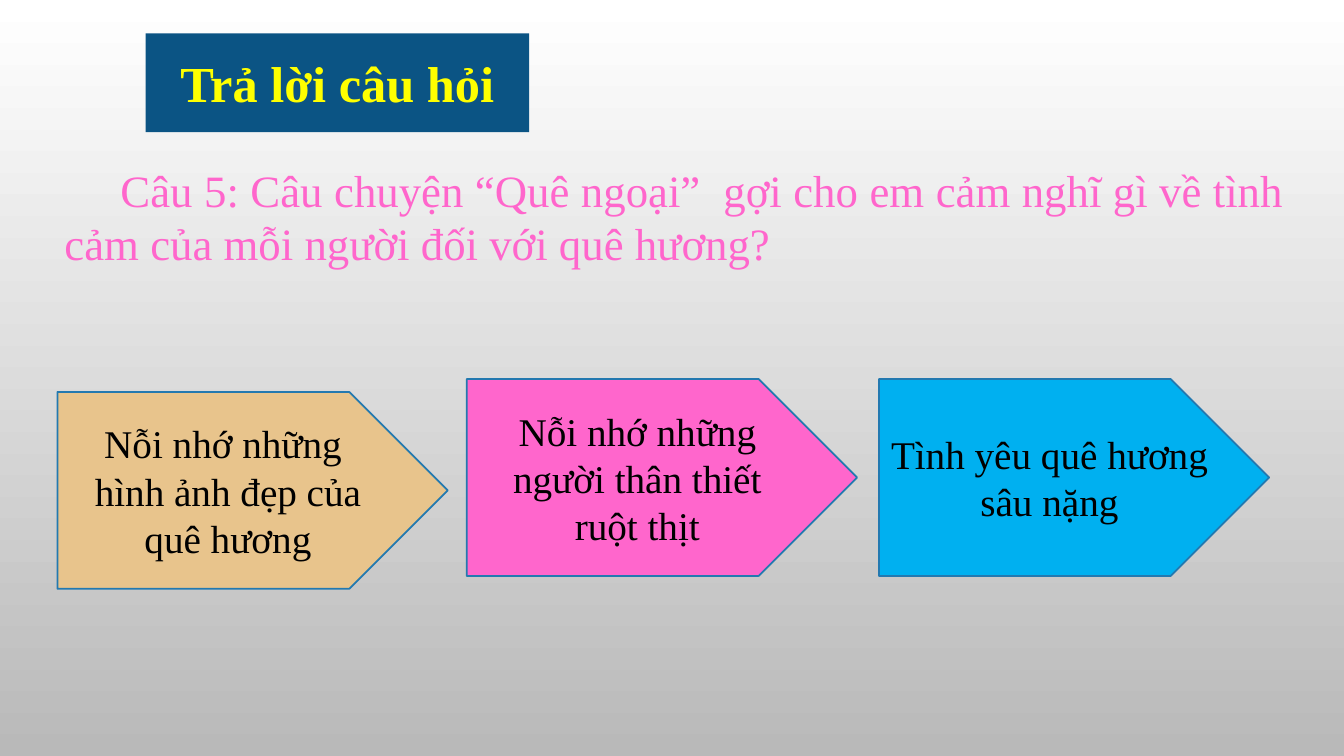
import lxml.etree
import pptx
import pptx.dml.color
import pptx.enum.shapes
import pptx.enum.text
import pptx.oxml.ns
import pptx.util

Pt = pptx.util.Pt
ALIGN = pptx.enum.text.PP_ALIGN
ANCHOR = pptx.enum.text.MSO_ANCHOR
AUTO_SIZE = pptx.enum.text.MSO_AUTO_SIZE
FONT_NAME = "Times New Roman"
ARROWS = [
    (41, 280, "E8C48C", ["Nỗi nhớ những ", "hình ảnh đẹp của quê hương"]),
    (333.4, 270.8, "FF66CC", ["Nỗi nhớ những người thân thiết ruột thịt"]),
    (627.8, 270.8, "00B0F0", ["Tình yêu quê hương sâu nặng"]),
]


def color(hex_value):
    """Return the colour for a hex string."""
    return pptx.dml.color.RGBColor.from_string(hex_value)


def apply_format(target, values):
    """Set each attribute of the target from a dict of values."""
    for name, value in values.items():
        setattr(target, name, value)


def place(shape, box):
    """Move and size a shape to a box in points."""
    apply_format(shape, dict(zip(("left", "top", "width", "height"), map(Pt, box))))


def write_text(shape, lines, alignment, anchor, font_values, font_color):
    """Fill a shape with formatted paragraphs."""
    frame = shape.text_frame
    apply_format(frame, {"text": "\n".join(lines), "word_wrap": True,
                         "auto_size": AUTO_SIZE.NONE, "vertical_anchor": anchor})
    for paragraph in frame.paragraphs:
        paragraph.alignment = alignment
        apply_format(paragraph.font, {"name": FONT_NAME, **font_values})
        paragraph.font.color.rgb = color(font_color)


def paint_background(slide):
    """Fill the slide with a white to grey gradient running down."""
    fill = slide.background.fill
    fill.gradient()
    fill.gradient_angle = 270
    for stop, position, hex_value in zip(fill.gradient_stops, (0, 1), ("FFFFFF", "B9B9B9")):
        stop.position = position
        stop.color.rgb = color(hex_value)


def build_title(slide, box):
    """Turn the title placeholder into a rounded blue banner."""
    title = slide.shapes.title
    place(title, box)
    properties = title.element.spPr
    geometry = lxml.etree.SubElement(properties, pptx.oxml.ns.qn("a:prstGeom"), prst="roundRect")
    lxml.etree.SubElement(geometry, pptx.oxml.ns.qn("a:avLst"))
    title.fill.solid()
    title.fill.fore_color.rgb = color("0B5484")
    write_text(title, ["Trả lời câu hỏi"], ALIGN.CENTER, ANCHOR.MIDDLE,
               {"size": Pt(36), "bold": True}, "FFFF00")


def build_question(slide, box):
    """Add the question with an indented first line."""
    question = slide.shapes.add_textbox(*map(Pt, box))
    text = ("Câu 5: Câu chuyện “Quê ngoại”  gợi cho em cảm nghĩ gì về tình "
            "cảm của mỗi người đối với quê hương?")
    write_text(question, [text], ALIGN.JUSTIFY, ANCHOR.TOP, {"size": Pt(32)}, "FF66CC")
    paragraph = question.text_frame.paragraphs[0]
    paragraph._p.get_or_add_pPr().set("indent", str(Pt(40)))


def build_arrow(slide, box, fill_color, lines):
    """Add one answer arrow."""
    arrow = slide.shapes.add_shape(pptx.enum.shapes.MSO_SHAPE.PENTAGON, *map(Pt, box))
    arrow.shadow.inherit = False
    arrow.fill.solid()
    arrow.fill.fore_color.rgb = color(fill_color)
    arrow.line.color.rgb = color("2379B0")
    arrow.line.width = Pt(1.25)
    write_text(arrow, lines, ALIGN.CENTER, ANCHOR.MIDDLE, {"size": Pt(28)}, "000000")


def main():
    """Build the slide and save it."""
    presentation = pptx.Presentation()
    apply_format(presentation, {"slide_width": Pt(960), "slide_height": Pt(540)})
    slide = presentation.slides.add_slide(presentation.slide_layouts[5])
    paint_background(slide)
    build_title(slide, (104, 23.8, 274, 70.6))
    build_question(slide, (39, 112.4, 885.6, 85))
    for left, top, fill_color, lines in ARROWS:
        build_arrow(slide, (left, top, 278.8, 140.6), fill_color, lines)
    presentation.save("out.pptx")


if __name__ == "__main__":
    main()
